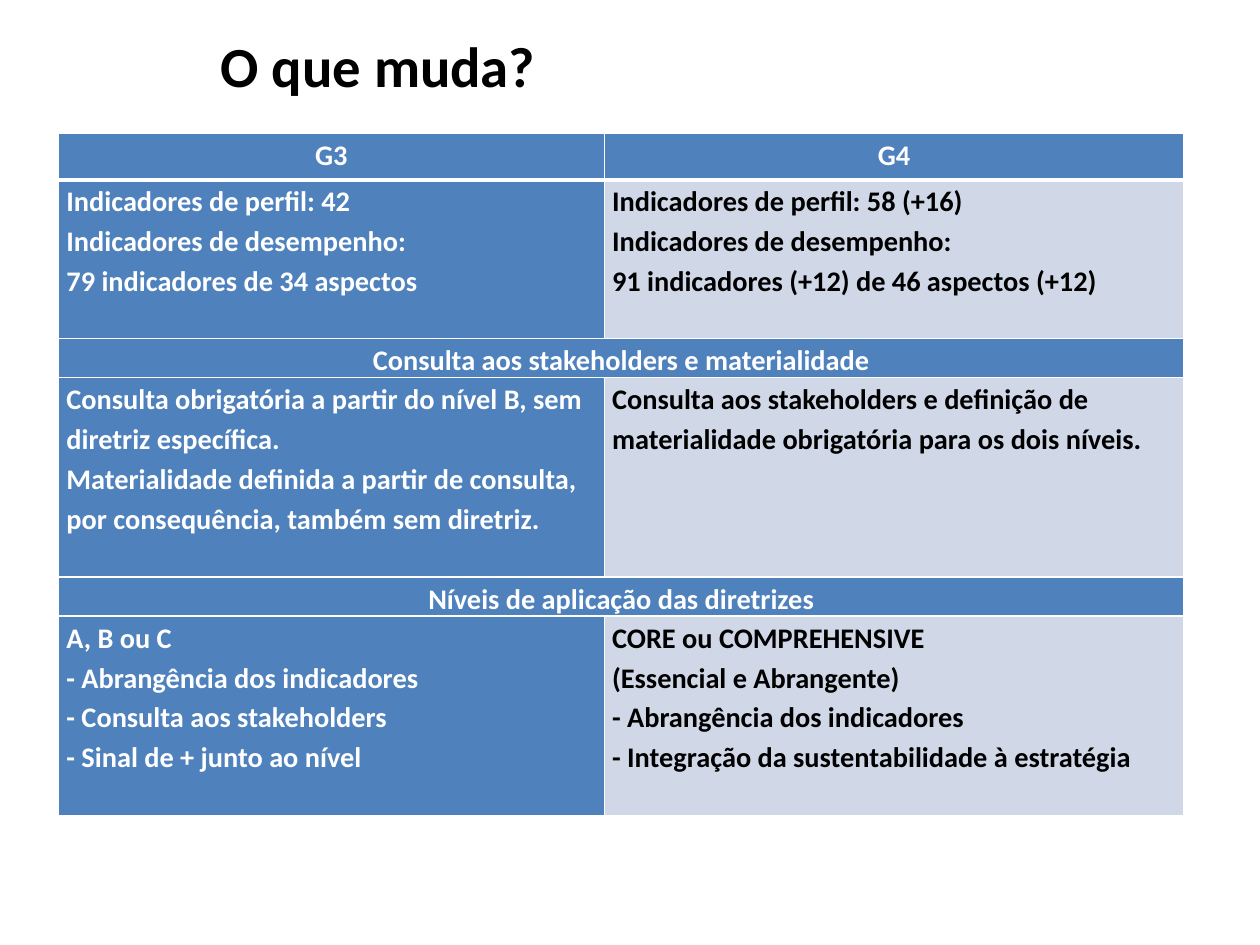
"""Build the slide comparing the G3 and G4 guidelines in a table."""
from lxml import etree
from pptx import Presentation
from pptx.dml.color import RGBColor
from pptx.enum.text import MSO_ANCHOR, PP_ALIGN
from pptx.oxml.ns import qn
from pptx.util import Pt

TITLE = "O que muda?"
ROWS = [
    (29.5, [["G3"], ["G4"]]),
    (100.8, [
        ["Indicadores de perfil: 42", "Indicadores de desempenho:",
         "79 indicadores de 34 aspectos"],
        ["Indicadores de perfil: 58 (+16)", "Indicadores de desempenho:",
         "91 indicadores (+12) de 46 aspectos (+12)"],
    ]),
    (23.8, [["Consulta aos stakeholders e materialidade"]]),
    (126.6, [
        ["Consulta obrigatória a partir do nível B, sem diretriz específica.",
         "Materialidade definida a partir de consulta, por consequência, "
         "também sem diretriz."],
        ["Consulta aos stakeholders e definição de materialidade "
         "obrigatória para os dois níveis."],
    ]),
    (23.8, [["Níveis de aplicação das diretrizes"]]),
    (126.6, [
        ["A, B ou C", "- Abrangência dos indicadores",
         "- Consulta aos stakeholders", "- Sinal de + junto ao nível"],
        ["CORE ou COMPREHENSIVE", "(Essencial e Abrangente)",
         "- Abrangência dos indicadores",
         "- Integração da sustentabilidade à estratégia"],
    ]),
]
COL_WIDTHS = [346.4, 368]
SLIDE_W, SLIDE_H = 799.88, 600.13
TABLE_LEFT, TABLE_TOP = 37.2, 84.7

WHITE = RGBColor(0xFF, 0xFF, 0xFF)
BLACK = RGBColor(0, 0, 0)
BLUE = RGBColor(0x4F, 0x81, 0xBD)
PALE = RGBColor(0xD0, 0xD8, 0xE8)
CENTER, LEFT = PP_ALIGN.CENTER, PP_ALIGN.LEFT
TOP, MIDDLE = MSO_ANCHOR.TOP, MSO_ANCHOR.MIDDLE
CELL_FORMAT = {"margin_left": Pt(5), "margin_right": Pt(5),
               "margin_top": 0, "margin_bottom": 0, "vertical_anchor": TOP}


def write(tf, lines, size, color, align, spacing):
    """Write one bold paragraph per line."""
    for i, text in enumerate(lines):
        p = tf.add_paragraph() if i else tf.paragraphs[0]
        p.alignment, p.line_spacing = align, spacing
        r = p.add_run()
        r.text = text
        r.font.color.rgb = color
        for name, value in {"name": "Calibri", "size": Pt(size), "bold": True}.items():
            setattr(r.font, name, value)


def add_borders(cell, widths):
    """Draw white borders of the given widths around a cell."""
    props = cell._tc.get_or_add_tcPr()
    for side, width in widths.items():
        line = etree.SubElement(props, qn(f"a:ln{side}"), w=str(Pt(width)))
        fill = etree.SubElement(line, qn("a:solidFill"))
        etree.SubElement(fill, qn("a:srgbClr"), val=str(WHITE))


def main():
    """Place the title and the table, then save."""
    prs = Presentation()
    prs.slide_width, prs.slide_height = Pt(SLIDE_W), Pt(SLIDE_H)
    s = prs.slides.add_slide(prs.slide_layouts[6])

    tf = s.shapes.add_textbox(Pt(26), Pt(11), Pt(428), Pt(60.5)).text_frame
    tf.word_wrap, tf.vertical_anchor = True, MIDDLE
    write(tf, [TITLE], 36, BLACK, CENTER, 1)

    table = s.shapes.add_table(
        len(ROWS), len(COL_WIDTHS), Pt(TABLE_LEFT), Pt(TABLE_TOP),
        Pt(sum(COL_WIDTHS)), Pt(sum(height for height, _ in ROWS))).table
    for column, width in zip(table.columns, COL_WIDTHS):
        column.width = Pt(width)

    for i, (height, texts) in enumerate(ROWS):
        table.rows[i].height = Pt(height)
        banner = len(texts) == 1
        heading = banner or i == 0
        if banner:
            table.cell(i, 0).merge(table.cell(i, 1))
        for j in range(len(COL_WIDTHS)):
            cell = table.cell(i, j)
            pale = j == 1 and not heading
            add_borders(cell, {"L": 1, "R": 1, "T": 3 if i == 1 else 1,
                               "B": 3 if i == 0 else 1})
            cell.fill.solid()
            cell.fill.fore_color.rgb = PALE if pale else BLUE
            for name, value in CELL_FORMAT.items():
                setattr(cell, name, value)
            if j < len(texts):
                write(cell.text_frame, texts[j], 18, BLACK if pale else WHITE,
                      CENTER if heading else LEFT, 1.15)

    prs.save("out.pptx")


if __name__ == "__main__":
    main()
